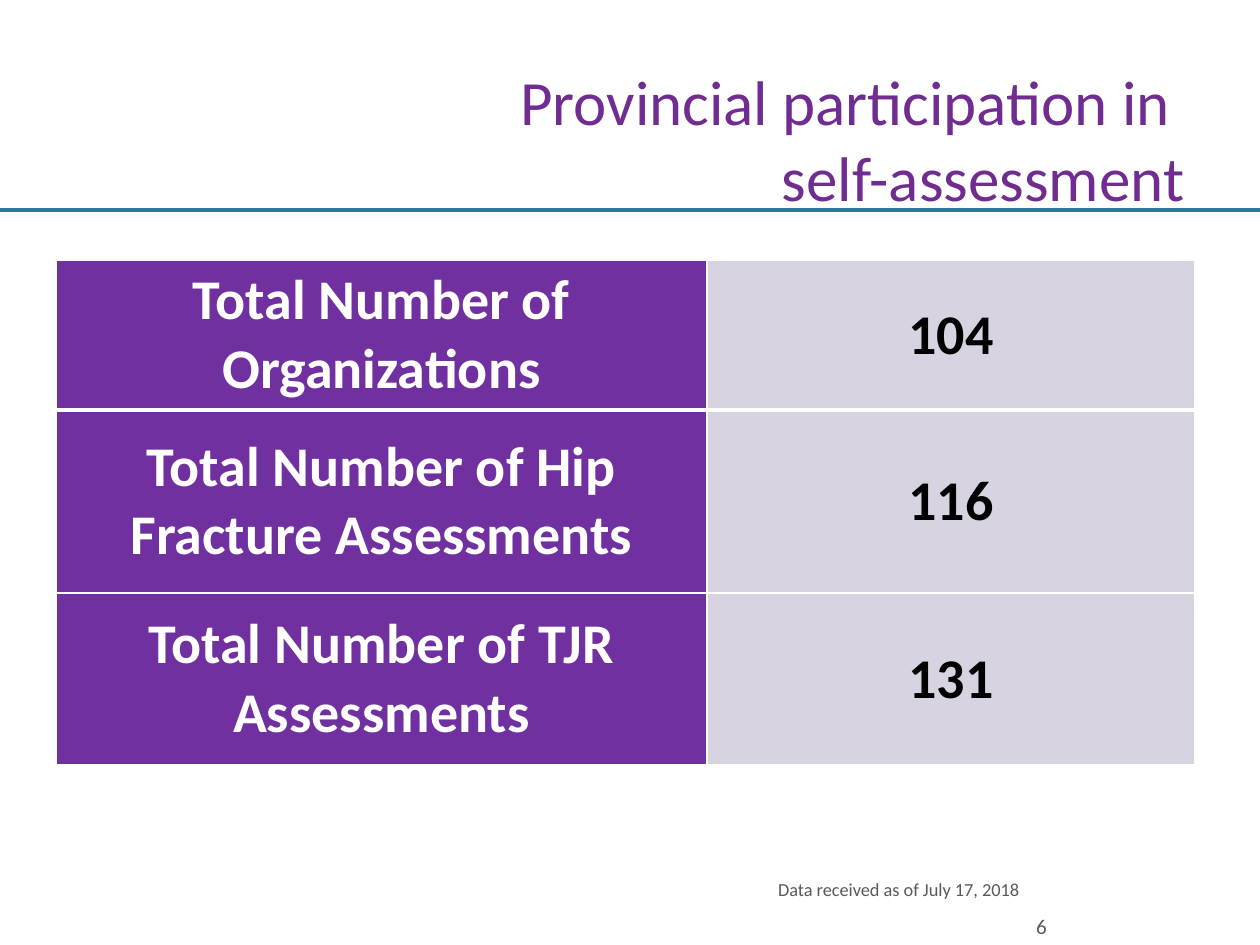
from dataclasses import dataclass
from lxml.etree import SubElement
from pptx import Presentation
from pptx.dml.color import RGBColor as Color
from pptx.enum.shapes import MSO_CONNECTOR as Connector, MSO_SHAPE as Shape
from pptx.enum.text import MSO_ANCHOR as Anchor, PP_ALIGN as Align
from pptx.oxml.ns import qn
from pptx.util import Emu, Pt


@dataclass(frozen=True)
class Theme:
    font: str = "Calibri"
    title: str = "702C91"
    rule: str = "30779D"
    label: str = "7030A0"
    value: str = "D8D3E0"
    white: str = "FFFFFF"
    black: str = "000000"
    grey: str = "595959"
    title_size: float = 36
    table_size: float = 32
    number_size: float = 12
    note_size: float = 10.5


THEME = Theme()
ROWS = (
    ("Total Number of Organizations", "104"),
    ("Total Number of Hip Fracture Assessments", "116"),
    ("Total Number of TJR Assessments", "131"),
)
COLUMN_WIDTHS = (651, 488)
ROW_HEIGHTS = (150, 183, 172)


def px(length):
    return Emu(round(length * 914400 / 126))


def place(box, left, top, width, height):
    box.left, box.top = px(left), px(top)
    box.width, box.height = px(width), px(height)


def add_span(para, text, size, color, bold=False):
    span = para.add_run()
    span.text = text
    span.font.name = THEME.font
    span.font.size = Pt(size)
    span.font.bold = bold
    span.font.color.rgb = Color.from_string(color)


def paint(target, color):
    target.fill.solid()
    target.fill.fore_color.rgb = Color.from_string(color)


def add_rule(page):
    rule = page.shapes.add_connector(Connector.STRAIGHT, 0, px(210), px(1260), px(210))
    rule.line.color.rgb = Color.from_string(THEME.rule)
    rule.line.width = Pt(2)
    SubElement(rule._element.spPr, qn("a:effectLst"))


def add_title(page, lines):
    box = page.shapes.title
    place(box, 63, 0, 1134, 220)
    frame = box.text_frame
    frame.word_wrap = True
    frame.vertical_anchor = Anchor.BOTTOM
    para = frame.paragraphs[0]
    para.alignment = Align.RIGHT
    for index, line in enumerate(lines):
        if index:
            para.add_line_break()
        add_span(para, line, THEME.title_size, THEME.title)


def add_borders(cell, top, bottom):
    properties = cell._tc.get_or_add_tcPr()
    for side, width in (("L", 1), ("R", 1), ("T", top), ("B", bottom)):
        border = SubElement(properties, qn(f"a:ln{side}"), w=str(Pt(width)))
        fill = SubElement(border, qn("a:solidFill"))
        SubElement(fill, qn("a:srgbClr"), val=THEME.white)


def fill_cell(cell, text, fill, color, top, bottom):
    add_borders(cell, top, bottom)
    paint(cell, fill)
    cell.vertical_anchor = Anchor.MIDDLE
    cell.margin_left = cell.margin_right = px(8)
    cell.margin_top = cell.margin_bottom = px(5)
    para = cell.text_frame.paragraphs[0]
    para.alignment = Align.CENTER
    add_span(para, text, THEME.table_size, color, bold=True)


def add_totals(page):
    table = page.shapes.add_table(
        len(ROWS), len(COLUMN_WIDTHS), px(56), px(260),
        px(sum(COLUMN_WIDTHS)), px(sum(ROW_HEIGHTS))).table
    table.first_row = table.horz_banding = False
    for column, width in zip(table.columns, COLUMN_WIDTHS):
        column.width = px(width)
    for index, (label, value) in enumerate(ROWS):
        table.rows[index].height = px(ROW_HEIGHTS[index])
        top = 3 if index == 1 else 1
        bottom = 3 if index == 0 else 1
        fill_cell(table.cell(index, 0), label, THEME.label, THEME.white, top, bottom)
        fill_cell(table.cell(index, 1), value, THEME.value, THEME.black, top, bottom)


def add_page_number(page, number):
    box = page.shapes.add_textbox(px(1032), px(907), px(44), px(38))
    frame = box.text_frame
    frame.word_wrap = True
    frame.vertical_anchor = Anchor.MIDDLE
    frame.margin_left = px(4)
    frame.margin_right = frame.margin_top = frame.margin_bottom = px(6)
    add_span(frame.paragraphs[0], number, THEME.number_size, THEME.grey)


def add_note(page, text):
    box = page.shapes.add_shape(Shape.RECTANGLE, px(551), px(872), px(481), px(35))
    box.shadow.inherit = False
    paint(box, THEME.white)
    box.line.fill.background()
    frame = box.text_frame
    frame.word_wrap = True
    frame.vertical_anchor = Anchor.TOP
    para = frame.paragraphs[0]
    para.alignment = Align.RIGHT
    add_span(para, text, THEME.note_size, THEME.grey)


def main():
    deck = Presentation()
    deck.slide_width, deck.slide_height = px(1260), px(945)
    page = deck.slides.add_slide(deck.slide_layouts[5])
    add_rule(page)
    add_title(page, ("Provincial participation in ", "self-assessment"))
    add_totals(page)
    add_page_number(page, "6")
    add_note(page, "Data received as of July 17, 2018")
    deck.save("out.pptx")


if __name__ == "__main__":
    main()
